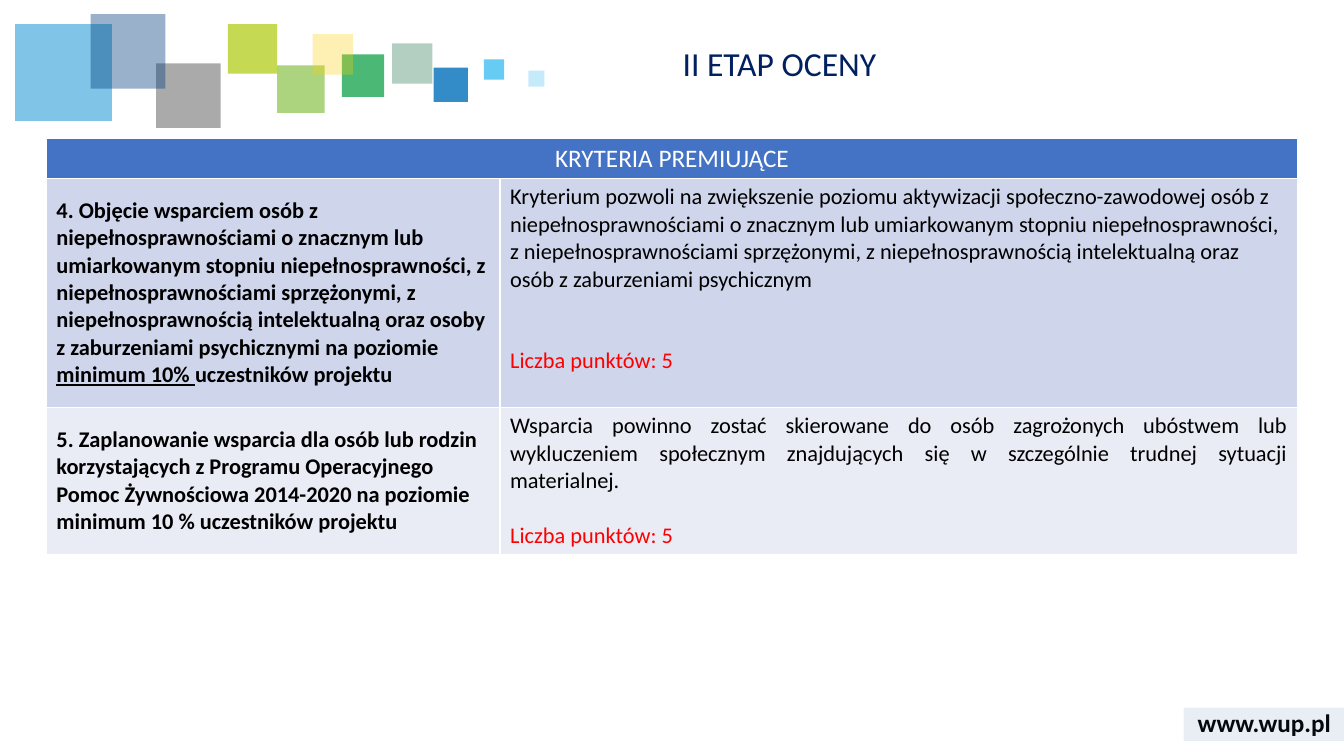
from lxml import etree
from pptx import Presentation, util as u
from pptx.dml.color import RGBColor
from pptx.enum import shapes, text
from pptx.oxml import ns

# Content
TITLE = "II ETAP OCENY"
SITE = "www.wup.pl"
HEAD = "KRYTERIA PREMIUJĄCE"
POINTS = "Liczba punktów: 5"

# Each row: criterion runs (text, underlined), reason, justified, lines of gap
ROWS = [
    ([("4. Objęcie wsparciem osób z niepełnosprawnościami o znacznym "
       "lub umiarkowanym stopniu niepełnosprawności, "
       "z niepełnosprawnościami sprzężonymi, z niepełnosprawnością "
       "intelektualną oraz osoby z zaburzeniami psychicznymi na poziomie ", False),
      ("minimum 10% ", True),
      ("uczestników projektu", False)],
     "Kryterium pozwoli na zwiększenie poziomu aktywizacji "
     "społeczno-zawodowej osób z niepełnosprawnościami o znacznym lub "
     "umiarkowanym stopniu niepełnosprawności, z niepełnosprawnościami "
     "sprzężonymi, z niepełnosprawnością intelektualną oraz osób "
     "z zaburzeniami psychicznym", False, 2),
    ([("5. Zaplanowanie wsparcia dla osób lub rodzin korzystających "
       "z Programu Operacyjnego Pomoc Żywnościowa 2014-2020 na poziomie "
       "minimum 10 % uczestników projektu", False)],
     "Wsparcia powinno zostać skierowane do osób zagrożonych ubóstwem "
     "lub wykluczeniem społecznym znajdujących się w szczególnie trudnej "
     "sytuacji materialnej.", True, 1),
]

# Banner squares: left, top, side, colour, opacity in percent
SQUARES = [
    (3.89, 0.43, 0.4, "006138", 30),
    (4.3, 0.67, 0.34, "006EB9", 80),
    (3.39, 0.54, 0.42, "009A3C", 70),
    (0.15, 0.24, 0.96, "028BD3", 50),
    (2.75, 0.65, 0.47, "75B82A", 60),
    (1.55, 0.63, 0.64, "575757", 50),
    (0.9, 0.14, 0.74, "003D7C", 40),
    (4.8, 0.59, 0.2, "40C0F1", 80),
    (2.26, 0.24, 0.49, "AFCA0B", 70),
    (3.1, 0.34, 0.4, "FED000", 30),
    (5.24, 0.7, 0.16, "40C0F1", 30),
]

THEME = dict(
    font="Calibri", title="002060", ink="000000", white="FFFFFF",
    mark="FF0000", head="4472C4", bands=("CFD5EA", "E9EBF5"), tag="2F5597",
    big=24, mid=18, small=16, line=19.5)

WIDE, HIGH = 13.33, 7.5
COLS = (4.5, 7.91)
TALL = (0.4, 2.27, 1.46)
TAG = (11.74, 7.02, 1.6, 0.33)
ALIGN = text.PP_ALIGN


def inches(*sizes):
    return [u.Inches(size) for size in sizes]


def write(par, words, size=THEME["small"], color=THEME["ink"], bold=False,
          under=False, align=ALIGN.LEFT, before=0):
    par.alignment = align
    if before:
        par.space_before = u.Pt(before)
    run = par.add_run()
    run.text = words
    font = run.font
    font.name, font.size = THEME["font"], u.Pt(size)
    font.bold, font.underline = bold, under
    font.color.rgb = RGBColor.from_string(color)


def panel(slide, box, color, alpha):
    rect = slide.shapes.add_shape(shapes.MSO_SHAPE.RECTANGLE, *inches(*box))
    rect.shadow.inherit = False
    rect.line.fill.background()
    rect.fill.solid()
    rect.fill.fore_color.rgb = RGBColor.from_string(color)
    tint = rect.fill._xPr.find(".//" + ns.qn("a:srgbClr"))
    etree.SubElement(tint, ns.qn("a:alpha"), val=str(alpha * 1000))


def paint(cell, color):
    cell.fill.solid()
    cell.fill.fore_color.rgb = RGBColor.from_string(color)
    props = cell._tc.get_or_add_tcPr()
    for spot, side in enumerate(("lnL", "lnR", "lnT", "lnB")):
        edge = etree.Element(ns.qn("a:" + side), w=str(u.Pt(1)))
        fill = etree.SubElement(edge, ns.qn("a:solidFill"))
        etree.SubElement(fill, ns.qn("a:srgbClr"), val=THEME["white"])
        props.insert(spot, edge)


def build_table(slide):
    box = inches(0.46, 1.37, sum(COLS), sum(TALL))
    grid = slide.shapes.add_table(len(TALL), len(COLS), *box).table
    for col, width in zip(grid.columns, COLS):
        col.width = u.Inches(width)
    for row, height in zip(grid.rows, TALL):
        row.height = u.Inches(height)

    # Header
    for cell in grid.rows[0].cells:
        paint(cell, THEME["head"])
    top = grid.cell(0, 0)
    top.merge(grid.cell(0, 1))
    write(top.text_frame.paragraphs[0], HEAD, size=THEME["mid"],
          color=THEME["white"], align=ALIGN.CENTER)

    # Criteria
    for num, (runs, reason, just, gap) in enumerate(ROWS, 1):
        left, right = grid.cell(num, 0), grid.cell(num, 1)
        for cell in (left, right):
            paint(cell, THEME["bands"][num - 1])
        left.vertical_anchor = text.MSO_ANCHOR.MIDDLE
        for words, under in runs:
            write(left.text_frame.paragraphs[0], words, bold=True, under=under)
        frame = right.text_frame
        write(frame.paragraphs[0], reason,
              align=ALIGN.JUSTIFY if just else ALIGN.LEFT)
        write(frame.add_paragraph(), POINTS, color=THEME["mark"],
              align=ALIGN.LEFT if just else ALIGN.JUSTIFY,
              before=gap * THEME["line"])


def main():
    deck = Presentation()
    deck.slide_width, deck.slide_height = inches(WIDE, HIGH)
    slide = deck.slides.add_slide(deck.slide_layouts[5])

    # Site tag
    label = slide.shapes.add_textbox(*inches(11.74, 6.97, 1.6, 0.4))
    frame = label.text_frame
    frame.word_wrap = True
    frame.vertical_anchor = text.MSO_ANCHOR.MIDDLE
    write(frame.paragraphs[0], SITE, size=THEME["mid"], bold=True,
          align=ALIGN.CENTER)
    panel(slide, TAG, THEME["tag"], 10)

    # Banner
    for left, top, side, color, alpha in SQUARES:
        panel(slide, (left, top, side, side), color, alpha)

    build_table(slide)

    # Title
    title = slide.shapes.title
    title.left, title.top, title.width, title.height = inches(
        6.67, 0.42, 6.36, 0.55)
    frame = title.text_frame
    frame.auto_size = text.MSO_AUTO_SIZE.NONE
    frame.vertical_anchor = text.MSO_ANCHOR.TOP
    frame.paragraphs[0].line_spacing = 0.9
    write(frame.paragraphs[0], TITLE, size=THEME["big"], color=THEME["title"])

    deck.save("out.pptx")


if __name__ == "__main__":
    main()
